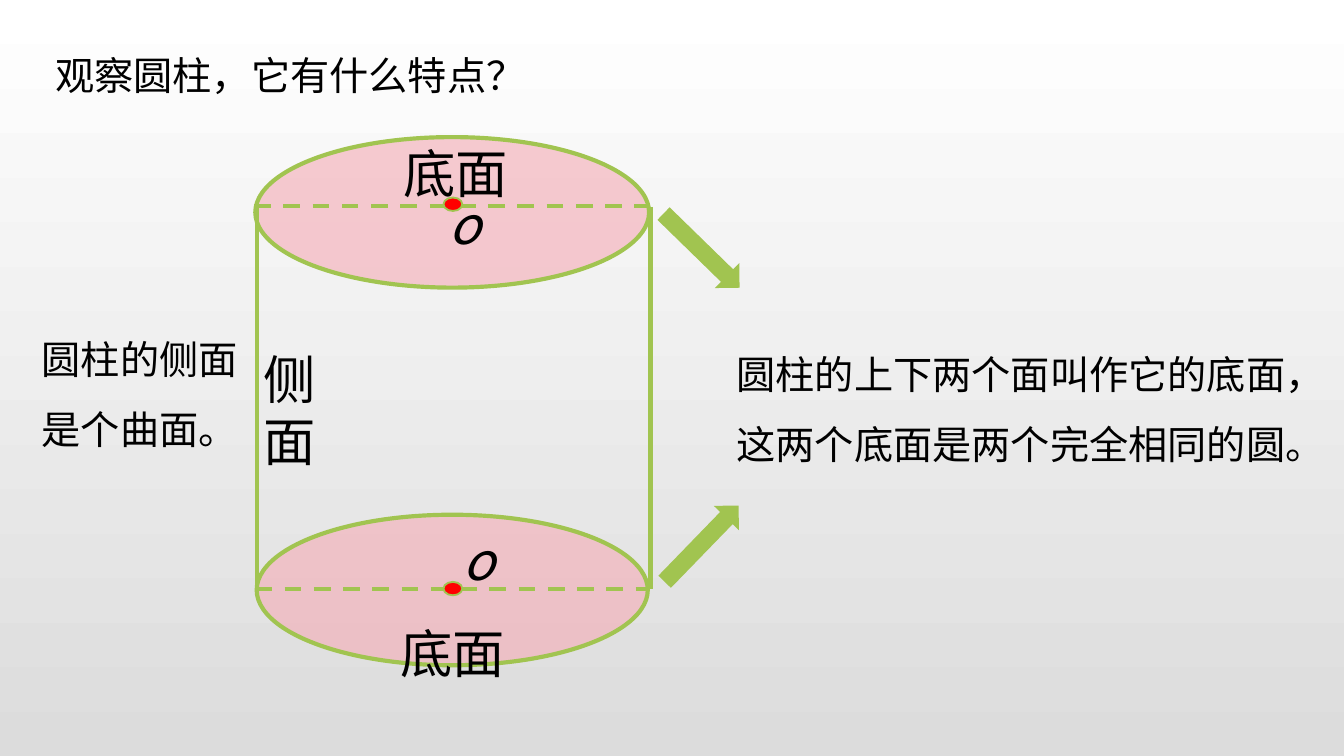
import pptx
import pptx.util
import pptx.dml.color
import pptx.enum.dml
import pptx.enum.shapes
import pptx.enum.text
import pptx.oxml
import pptx.oxml.ns
from lxml import etree

Inches = pptx.util.Inches
Pt = pptx.util.Pt
RGB = pptx.dml.color.RGBColor.from_string
SHAPES = pptx.enum.shapes.MSO_SHAPE
qn = pptx.oxml.ns.qn

COLORS = {"top": "FFFFFF", "bottom": "DCDCDC", "base": "F4AEB8",
          "green": "A1C450", "center": "FF0000", "text": "000000"}
FONT = "Noto Sans CJK SC"

# Widescreen slide, 16:9
presentation = pptx.Presentation()
presentation.slide_width = Inches(10)
presentation.slide_height = Inches(10 * 9 / 16)
slide = presentation.slides.add_slide(presentation.slide_layouts[5])

# Background gradient, from top to bottom
background = slide.background.fill
background.gradient()
background.gradient_angle = 270
for stop, position, name in zip(background.gradient_stops, (0, 1), ("top", "bottom")):
    stop.position = position
    stop.color.rgb = RGB(COLORS[name])


def add_filled_shape(kind, box, fill, line_width=0):
    shape = slide.shapes.add_shape(kind, *map(Inches, box))
    shape.shadow.inherit = False
    shape.fill.solid()
    shape.fill.fore_color.rgb = RGB(COLORS[fill])
    if line_width:
        shape.line.color.rgb = RGB(COLORS["green"])
        shape.line.width = Pt(line_width)
    else:
        shape.line.fill.background()
    return shape


def write_text(shape, box, text, size, italic=False, line_spacing=1.0):
    shape.left, shape.top, shape.width, shape.height = map(Inches, box)
    frame = shape.text_frame
    frame.word_wrap = True
    frame.auto_size = pptx.enum.text.MSO_AUTO_SIZE.SHAPE_TO_FIT_TEXT
    frame.vertical_anchor = pptx.enum.text.MSO_ANCHOR.TOP
    frame.margin_left = frame.margin_right = Inches(0.07)
    frame.margin_top = frame.margin_bottom = Inches(0.04)
    paragraph = frame.paragraphs[0]
    paragraph.alignment = pptx.enum.text.PP_ALIGN.LEFT
    paragraph.line_spacing = line_spacing
    run = paragraph.add_run()
    run.text = text
    run.font.size = Pt(size)
    run.font.italic = italic
    run.font.color.rgb = RGB(COLORS["text"])
    run.font.name = FONT
    # Chinese characters take the East Asian typeface
    etree.SubElement(run.font._element, qn("a:ea"), typeface=FONT)


# Bases of the cylinder, partly transparent
for box in ((1.9, 1.02, 2.93, 1.12), (1.91, 3.83, 2.91, 1.12)):
    base = add_filled_shape(SHAPES.OVAL, box, "base", 2.25)
    color = base.fill._xPr.find(qn("a:solidFill"))[0]
    etree.SubElement(color, qn("a:alpha"), val="63000")

# Sides (solid) and diameters (dashed)
for x1, y1, x2, y2, dashed in (
    (4.84, 1.54, 4.84, 4.38, False),
    (1.91, 1.54, 1.91, 4.38, False),
    (1.89, 1.53, 4.83, 1.53, True),
    (1.9, 4.38, 4.84, 4.38, True),
):
    connector = slide.shapes.add_connector(
        pptx.enum.shapes.MSO_CONNECTOR.STRAIGHT, *map(Inches, (x1, y1, x2, y2)))
    connector.line.color.rgb = RGB(COLORS["green"])
    connector.line.width = Pt(2.25)
    if dashed:
        connector.line.dash_style = pptx.enum.dml.MSO_LINE.DASH
    etree.SubElement(connector._element.spPr, qn("a:effectLst"))

# Question
write_text(slide.shapes.title, (0.34, 0.34, 6.43, 0.43), "观察圆柱，它有什么特点？", 21)

# Labels on the cylinder
for box, text, italic in (
    ((3.27, 1.39, 0.44, 0.55), "o", True),
    ((3.37, 3.89, 0.41, 0.55), "o", True),
    ((1.89, 2.54, 0.71, 1.02), "侧面", False),
    ((2.93, 1.01, 1.17, 0.55), "底面", False),
    ((2.91, 4.58, 1.17, 0.55), "底面", False),
):
    write_text(slide.shapes.add_textbox(0, 0, 0, 0), box, text, 28, italic)

# Centers of the bases
for top in (1.47, 4.33):
    add_filled_shape(SHAPES.OVAL, (3.3, top, 0.14, 0.1), "center", 1)

# Arrows from the bases to their explanation
for top, rotation in ((1.47, 314.3), (3.65, 224.1)):
    arrow = add_filled_shape(SHAPES.DOWN_ARROW, (5.09, top, 0.26, 0.79), "green")
    arrow.rotation = rotation

# Explanations
for box, text in (
    ((5.41, 2.39, 4.24, 1.14), "圆柱的上下两个面叫作它的底面，这两个底面是两个完全相同的圆。"),
    ((0.24, 2.28, 1.68, 1.14), "圆柱的侧面是个曲面。"),
):
    write_text(slide.shapes.add_textbox(0, 0, 0, 0), box, text, 21, line_spacing=1.5)

presentation.save("out.pptx")
